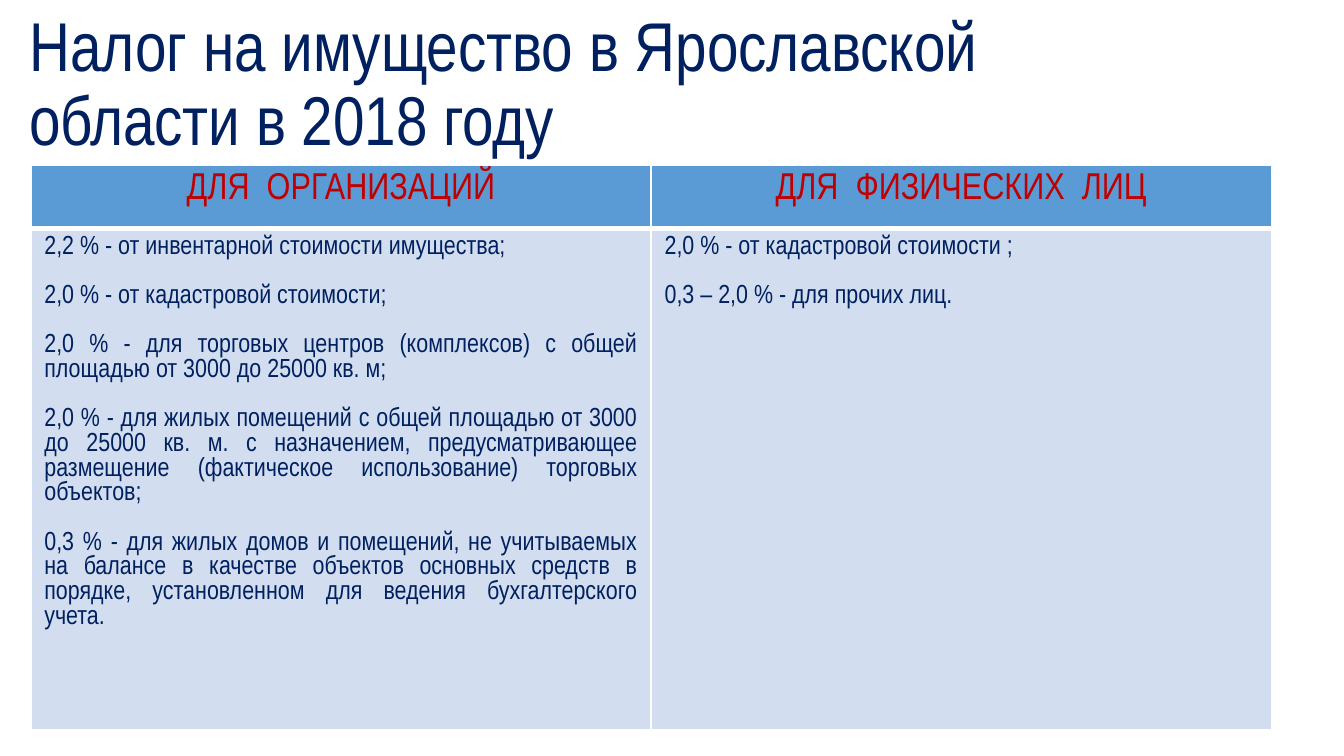
from dataclasses import dataclass

from lxml.etree import SubElement
from pptx import Presentation
from pptx.dml.color import RGBColor
from pptx.enum.text import MSO_ANCHOR, PP_ALIGN as Align
from pptx.oxml.ns import qn
from pptx.slide import Slide
from pptx.table import _Cell as Cell
from pptx.text.text import _Paragraph as Paragraph
from pptx.util import Inches, Pt


@dataclass(frozen=True)
class Theme:
    font: str = "Arial Narrow"
    navy: str = "002060"
    red: str = "C00000"
    header_fill: str = "5B9BD5"
    body_fill: str = "D2DEEF"
    border: str = "FFFFFF"
    title_size: float = 37
    header_size: float = 20
    body_size: float = 14
    title_spacing: float = 0.9
    paragraph_gap: float = 13.2
    thin: float = 1
    thick: float = 3


@dataclass(frozen=True)
class TaxColumn:
    heading: str
    rates: tuple[str, ...]
    align: Align


THEME = Theme()
TITLE = "Налог на имущество в Ярославской области в 2018 году"
COLUMNS = (
    TaxColumn(
        "ДЛЯ  ОРГАНИЗАЦИЙ",
        (
            "2,2 % - от инвентарной стоимости имущества;",
            "2,0 % - от кадастровой стоимости;",
            "2,0 % - для торговых центров (комплексов) с общей площадью "
            "от 3000 до 25000 кв. м;",
            "2,0 % - для жилых помещений с общей площадью от 3000 до 25000 кв. м. "
            "с назначением, предусматривающее размещение (фактическое "
            "использование) торговых объектов;",
            "0,3 % - для жилых домов и помещений, не учитываемых на балансе "
            "в качестве объектов основных средств в порядке, установленном "
            "для ведения бухгалтерского учета.",
        ),
        Align.JUSTIFY,
    ),
    TaxColumn(
        "ДЛЯ  ФИЗИЧЕСКИХ  ЛИЦ",
        ("2,0 % - от кадастровой стоимости ;", "0,3 – 2,0 % - для прочих лиц."),
        Align.LEFT,
    ),
)


def write(para: Paragraph, text: str, size: float, color: str, align: Align) -> None:
    para.text = text
    para.alignment = align
    para.font.name = THEME.font
    para.font.size = Pt(size)
    para.font.color.rgb = RGBColor.from_string(color)


def set_borders(cell: Cell, top: float, bottom: float) -> None:
    """Draw the four cell edges; call before the fill, which must follow them."""
    properties = cell._tc.get_or_add_tcPr()
    widths = {"a:lnL": THEME.thin, "a:lnR": THEME.thin, "a:lnT": top, "a:lnB": bottom}
    for tag, width in widths.items():
        line = SubElement(properties, qn(tag), w=str(Pt(width)))
        fill = SubElement(line, qn("a:solidFill"))
        SubElement(fill, qn("a:srgbClr"), val=THEME.border)


def paint(cell: Cell, color: str) -> None:
    cell.fill.solid()
    cell.fill.fore_color.rgb = RGBColor.from_string(color)


def add_title(page: Slide) -> None:
    box = page.shapes.add_textbox(Inches(0.12), Inches(0.09), Inches(8.62), Inches(1.1))
    frame = box.text_frame
    frame.word_wrap = True
    frame.vertical_anchor = MSO_ANCHOR.MIDDLE
    para = frame.paragraphs[0]
    write(para, TITLE, THEME.title_size, THEME.navy, Align.LEFT)
    para.line_spacing = THEME.title_spacing


def fill_column(header: Cell, body: Cell, column: TaxColumn) -> None:
    set_borders(header, THEME.thin, THEME.thick)
    paint(header, THEME.header_fill)
    write(header.text_frame.paragraphs[0], column.heading, THEME.header_size,
          THEME.red, Align.CENTER)

    set_borders(body, THEME.thick, THEME.thin)
    paint(body, THEME.body_fill)
    frame = body.text_frame
    for index, rate in enumerate(column.rates):
        para = frame.add_paragraph() if index else frame.paragraphs[0]
        write(para, rate, THEME.body_size, THEME.navy, column.align)
        if index:
            para.space_before = Pt(THEME.paragraph_gap)


def add_tax_table(page: Slide) -> None:
    table = page.shapes.add_table(2, len(COLUMNS), Inches(0.23), Inches(1.23),
                                  Inches(9.23), Inches(4.2)).table
    table.rows[0].height = Inches(0.47)
    table.rows[1].height = Inches(3.73)
    for index, column in enumerate(COLUMNS):
        fill_column(table.cell(0, index), table.cell(1, index), column)


def main() -> None:
    deck = Presentation()
    deck.slide_width = Inches(10)
    deck.slide_height = deck.slide_width * 9 // 16
    page = deck.slides.add_slide(deck.slide_layouts[6])
    add_title(page)
    add_tax_table(page)
    deck.save("out.pptx")


if __name__ == "__main__":
    main()
